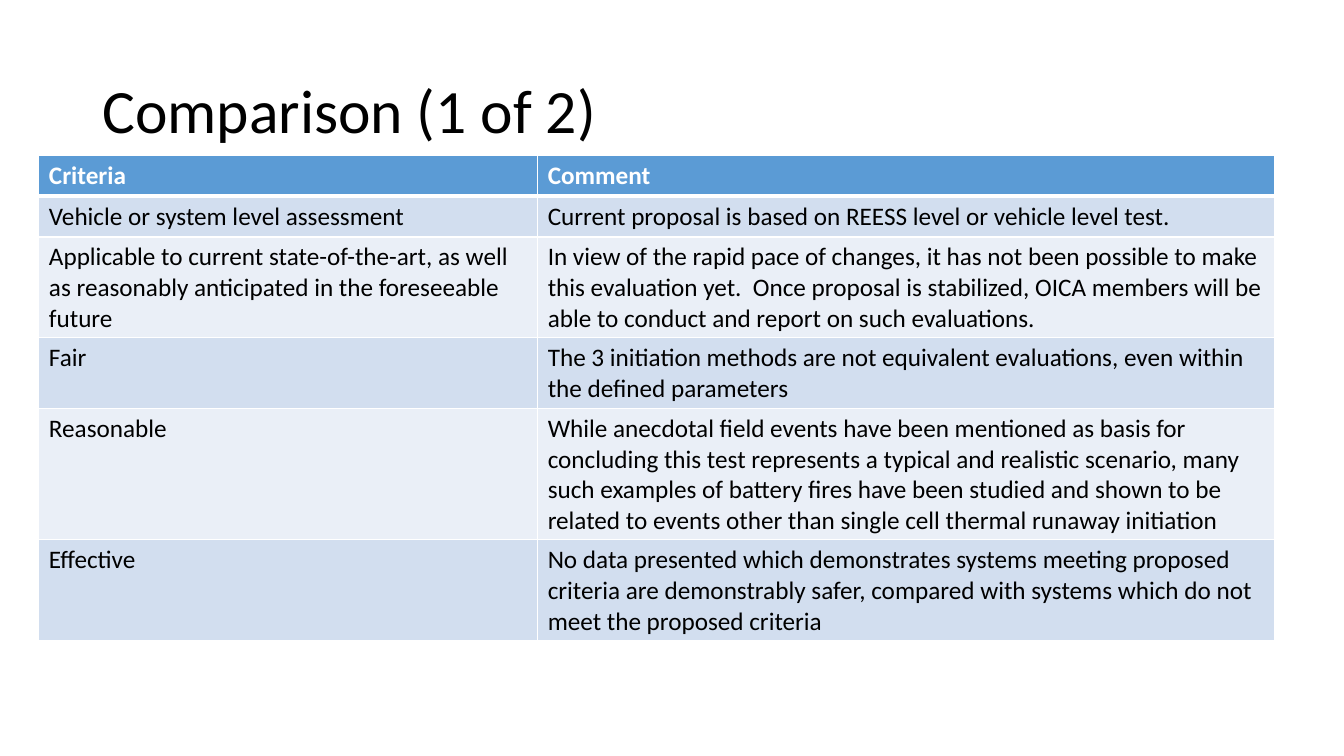
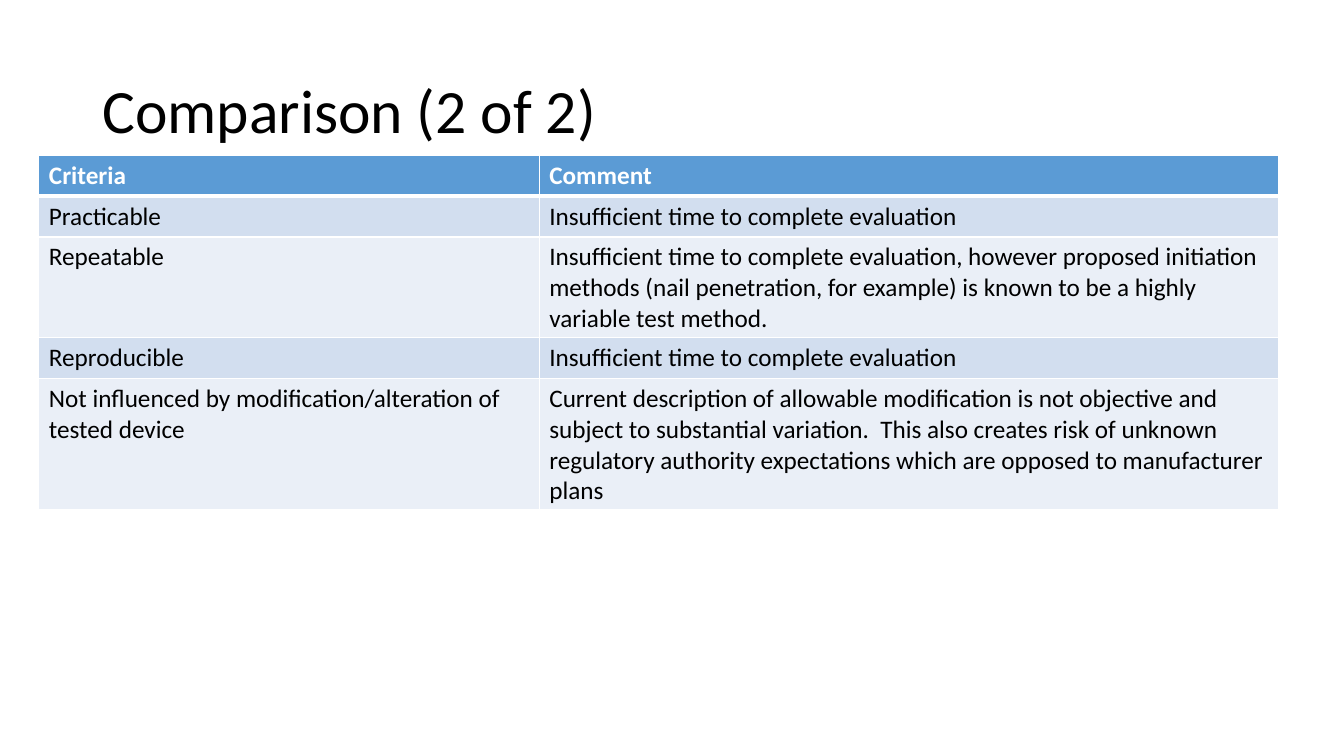
from lxml import etree
from pptx import Presentation
from pptx import util as u
from pptx.dml.color import RGBColor
from pptx.enum import text
from pptx.oxml import ns

COLORS = {
    "title": "000000",
    "body": "000000",
    "header_text": "FFFFFF",
    "header": "5B9BD5",
    "band_dark": "D2DEEF",
    "band_light": "EAEFF7",
    "border": "FFFFFF",
}

HEADER = ("Criteria", "Comment")

# Each slide: column widths in cm, then rows of criteria and comments
SLIDES = [
    ((12.57, 18.57), [
        ("Vehicle or system level assessment",
         "Current proposal is based on REESS level or vehicle level test."),
        ("Applicable to current state-of-the-art, as well as reasonably "
         "anticipated in the foreseeable future",
         "In view of the rapid pace of changes, it has not been possible to "
         "make this evaluation yet.  Once proposal is stabilized, OICA members "
         "will be able to conduct and report on such evaluations."),
        ("Fair",
         "The 3 initiation methods are not equivalent evaluations, even within "
         "the defined parameters"),
        ("Reasonable",
         "While anecdotal field events have been mentioned as basis for "
         "concluding this test represents a typical and realistic scenario, "
         "many such examples of battery fires have been studied and shown to "
         "be related to events other than single cell thermal runaway "
         "initiation"),
        ("Effective",
         "No data presented which demonstrates systems meeting proposed "
         "criteria are demonstrably safer, compared with systems which do not "
         "meet the proposed criteria"),
    ]),
    ((12.61, 18.62), [
        ("Practicable", "Insufficient time to complete evaluation"),
        ("Repeatable",
         "Insufficient time to complete evaluation, however proposed "
         "initiation methods (nail penetration, for example) is known to be a "
         "highly variable test method."),
        ("Reproducible", "Insufficient time to complete evaluation"),
        ("Not influenced by modification/alteration of tested device",
         "Current description of allowable modification is not objective and "
         "subject to substantial variation.  This also creates risk of unknown "
         "regulatory authority expectations which are opposed to manufacturer "
         "plans"),
    ]),
]


class ComparisonDeck:
    """Holds the shared style and the current slide."""

    font = "Calibri"
    title_size = 44
    body_size = 18
    row_height = u.Cm(1.03)

    def __init__(self):
        self.deck = Presentation()
        self.deck.slide_width = u.Cm(33.87)
        self.deck.slide_height = u.Cm(19.05)
        self.page = None

    def new_page(self):
        self.page = self.deck.slides.add_slide(self.deck.slide_layouts[6])

    def style_text(self, para, size, color, bold=False):
        for span in para.runs:
            span.font.name = self.font
            span.font.size = u.Pt(size)
            span.font.bold = bold
            span.font.color.rgb = RGBColor.from_string(COLORS[color])

    def title(self, wording):
        box = self.page.shapes.add_textbox(
            u.Cm(2.33), u.Cm(1.01), u.Cm(29.21), u.Cm(3.68))
        frame = box.text_frame
        frame.word_wrap = True
        frame.vertical_anchor = text.MSO_ANCHOR.MIDDLE
        frame.text = wording
        para = frame.paragraphs[0]
        para.line_spacing = 0.9
        self.style_text(para, self.title_size, "title")

    def borders(self, cell, top, bottom):
        properties = cell._tc.get_or_add_tcPr()
        for side, points in (("L", 1), ("R", 1), ("T", top), ("B", bottom)):
            line = etree.SubElement(properties, ns.qn(f"a:ln{side}"),
                                    w=str(u.Pt(points)))
            fill = etree.SubElement(line, ns.qn("a:solidFill"))
            etree.SubElement(fill, ns.qn("a:srgbClr"), val=COLORS["border"])

    def table(self, widths, rows):
        widths = [u.Cm(width) for width in widths]
        table = self.page.shapes.add_table(
            len(rows), len(widths), u.Cm(0.98), u.Cm(3.91),
            sum(widths), self.row_height * len(rows)).table
        for column, width in zip(table.columns, widths):
            column.width = width
        for index, wordings in enumerate(rows):
            is_header = index == 0
            band = "band_dark" if index % 2 else "band_light"
            for cell, wording in zip(table.rows[index].cells, wordings):
                # A thick rule separates the header from the first row
                self.borders(cell, top=3 if index == 1 else 1,
                             bottom=3 if is_header else 1)
                cell.fill.solid()
                cell.fill.fore_color.rgb = RGBColor.from_string(
                    COLORS["header" if is_header else band])
                cell.text_frame.text = wording
                self.style_text(cell.text_frame.paragraphs[0], self.body_size,
                                "header_text" if is_header else "body",
                                bold=is_header)


def main():
    comparison = ComparisonDeck()
    for number, (widths, rows) in enumerate(SLIDES, start=1):
        comparison.new_page()
        comparison.title(f"Comparison ({number} of {len(SLIDES)})")
        comparison.table(widths, [HEADER, *rows])
    comparison.deck.save("out.pptx")


if __name__ == "__main__":
    main()
